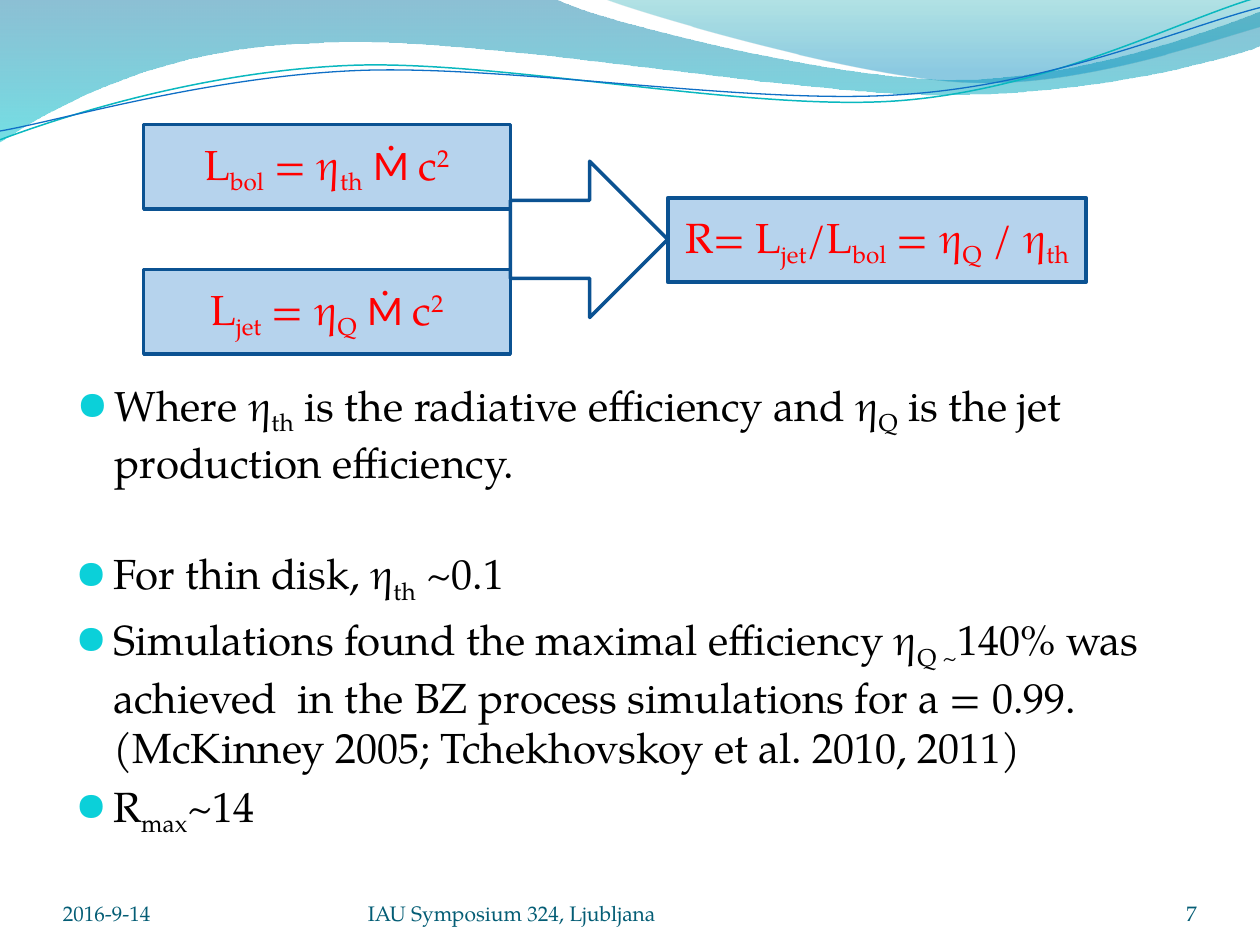
from math import cos, radians, sin

from lxml import etree
from pptx import Presentation
from pptx.dml.color import RGBColor
from pptx.enum import shapes, text
from pptx.oxml.ns import qn
from pptx.util import Inches, Pt

SERIF = "TeX Gyre Pagella"
BASELINES = {"_": -25000, "^": 30000}
OUTLINE = "0B5292"
LINE_TILT = -2.7

# Each wave is its place, then points of length 2 (line) or 6 (curve).
WAVES = [
    ((-0.01, -0.01, 10.02, 1.14),
     [(0, 0), (4.4, -0.01), (4.76, 0.17, 6.64, 0.63, 7.58, 0.63),
      (8.53, 0.63, 9.58, 0.26, 10, 0.09), (10.01, 0.36),
      (9.83, 0.44, 8.7, 0.76, 7.46, 0.75), (6.22, 0.75, 3.82, 0.28, 2.57, 0.34),
      (1.29, 0.36, 0.46, 0.83, -0.01, 1.13), (0, 0)],
     [(0, "0074A1", 45), (1, "00C6CF", 55)]),
    ((4.79, -0.01, 5.21, 0.7),
     [(4.79, -0.01), (5.09, 0.11, 6.82, 0.62, 7.69, 0.65),
      (8.56, 0.69, 9.61, 0.32, 10, 0.21), (10, 0), (4.79, -0.01)],
     [(0, "00A1A9", 30), (0.8, "008BBF", 45)]),
]
WAVE_LINES = [
    ((-0.02, 0.22, 10.02, 0.71),
     [(0, 1.11), (0.48, 0.93, 1.58, 0.57, 2.77, 0.52),
      (3.95, 0.47, 5.93, 0.89, 7.13, 0.8), (8.33, 0.71, 9.38, 0.15, 9.98, -0.02)],
     "0AB8BF", 0.85),
    ((-0.02, 0.3, 10.03, 0.58),
     [(0, 1.04), (0.47, 0.96, 1.64, 0.61, 2.83, 0.56),
      (4.03, 0.51, 5.97, 0.84, 7.17, 0.75), (8.36, 0.67, 9.41, 0.21, 10, 0.06)],
     "0F6FC6", 0.75),
]
# In marked text, "|" splits runs; a leading "_" lowers and "^" raises a run.
EQUATIONS = [
    ((1.14, 0.99, 2.91, 0.67), "L|_bol| = η|_th| |Ṁ |c|^2"),
    ((1.14, 2.14, 2.91, 0.67), "L|_jet| = η|_Q| |Ṁ |c|^2"),
    ((5.3, 1.57, 3.32, 0.67), "R= L|_jet|/L|_bol| = η|_Q| / η|_th"),
]
BULLET_LISTS = [
    ((0.5, 4.3, 9, 2.36), [
        "For thin disk, η|_th| ~0.1",
        "Simulations found the maximal efficiency η|_Q ~|140% was achieved  in the BZ "
        "process simulations for a = 0.99. (McKinney 2005; Tchekhovskoy et al. 2010, 2011)",
        "R|_max|~14"]),
    ((0.51, 2.96, 8.19, 1.02), [
        "Where η|_th| is the radiative efficiency and η|_Q| is the jet "
        "production efficiency."]),
]
FOOTERS = [
    ((0.5, 6.95, 2.33, 0.4), "2016-9-14", text.PP_ALIGN.LEFT),
    ((2.92, 6.95, 3.67, 0.4), "IAU Symposium 324, Ljubljana", text.PP_ALIGN.LEFT),
    ((8.67, 6.95, 0.83, 0.4), "7", text.PP_ALIGN.RIGHT),
]


def rgb(value):
    return RGBColor.from_string(value)


def box(place):
    return [Inches(length) for length in place]


def set_format(target, values):
    for name, value in values.items():
        setattr(target, name, value)


def set_alpha(fill_element, percents):
    """Give each colour in a fill its opacity, in order."""
    for color, percent in zip(fill_element.iter(qn("a:srgbClr")), percents):
        etree.SubElement(color, qn("a:alpha"), val=str(percent * 1000))


def set_line(shape, color, width):
    shape.line.color.rgb = rgb(color)
    shape.line.width = Pt(width)


def to_local(point, place, tilt):
    """Turn a point on the slide into one inside a tilted box."""
    left, top, width, height = place
    x, y = point[0] - left - width / 2, point[1] - top - height / 2
    angle = radians(-tilt)
    return (Inches(x * cos(angle) - y * sin(angle) + width / 2),
            Inches(x * sin(angle) + y * cos(angle) + height / 2))


def add_freeform(slide, place, segments, tilt=0):
    ends = [box(segment[-2:]) for segment in segments]
    builder = slide.shapes.build_freeform(*ends[0])
    builder.add_line_segments(ends[1:], close=ends[0] == ends[-1])
    shape = builder.convert_to_shape()
    shape.shadow.inherit = False
    left, top, width, height = box(place)
    set_format(shape, {"left": left, "top": top, "width": width, "height": height,
                       "rotation": tilt})
    outline = next(shape.element.iter(qn("a:path")))
    outline.set("w", str(width))
    outline.set("h", str(height))
    for step, segment in zip(list(outline), segments):
        step.clear()
        if len(segment) == 6:
            step.tag = qn("a:cubicBezTo")
        for index in range(0, len(segment), 2):
            x, y = to_local(segment[index:index + 2], place, tilt)
            etree.SubElement(step, qn("a:pt"), x=str(x), y=str(y))
    return shape


def add_wave(slide, place, segments, stops):
    shape = add_freeform(slide, place, segments)
    shape.line.fill.background()
    shape.fill.gradient()
    shape.fill.gradient_angle = 270
    for stop, (position, color, _) in zip(shape.fill.gradient_stops, stops):
        stop.position = position
        stop.color.rgb = rgb(color)
    set_alpha(shape.element.spPr, [alpha for _, _, alpha in stops])


def add_wave_line(slide, place, segments, color, width):
    shape = add_freeform(slide, place, segments, LINE_TILT)
    shape.fill.background()
    set_line(shape, color, width)


def write_runs(paragraph, marked, size, color):
    for part in marked.split("|"):
        baseline = BASELINES.get(part[0])
        run = paragraph.add_run()
        run.text = part[1:] if baseline else part
        set_format(run.font, {"size": Pt(size), "name": "Calibri" if "Ṁ" in part else SERIF})
        run.font.color.rgb = rgb(color)
        if baseline:
            run.font._element.set("baseline", str(baseline))


def add_equation(slide, place, marked):
    shape = slide.shapes.add_shape(shapes.MSO_SHAPE.FLOWCHART_PROCESS, *box(place))
    shape.shadow.inherit = False
    shape.fill.solid()
    shape.fill.fore_color.rgb = rgb("0F6FC6")
    set_alpha(shape.element.spPr, [30])
    set_line(shape, OUTLINE, 2)
    set_format(shape.text_frame, {"word_wrap": True,
                                  "vertical_anchor": text.MSO_ANCHOR.MIDDLE})
    paragraph = shape.text_frame.paragraphs[0]
    paragraph.alignment = text.PP_ALIGN.CENTER
    write_runs(paragraph, marked, 24, "FF0000")


def add_arrow(slide, place):
    shape = slide.shapes.add_shape(shapes.MSO_SHAPE.RIGHT_ARROW, *box(place))
    shape.shadow.inherit = False
    shape.fill.background()
    set_line(shape, OUTLINE, 2)


def set_bullet(paragraph):
    properties = paragraph._p.get_or_add_pPr()
    properties.set("marL", str(Inches(0.3)))
    properties.set("indent", str(Inches(-0.3)))
    color = etree.SubElement(properties, qn("a:buClr"))
    etree.SubElement(color, qn("a:srgbClr"), val="0BD0D9")
    etree.SubElement(properties, qn("a:buSzPct"), val="95000")
    etree.SubElement(properties, qn("a:buFont"), typeface="OpenSymbol")
    etree.SubElement(properties, qn("a:buChar"), char="●")


def add_bullets(slide, place, items):
    frame = slide.shapes.add_textbox(*box(place)).text_frame
    frame.word_wrap = True
    for index, item in enumerate(items):
        paragraph = frame.add_paragraph() if index else frame.paragraphs[0]
        paragraph.space_before = Pt(4.8)
        set_bullet(paragraph)
        write_runs(paragraph, item, 24, "000000")


def add_footer(slide, place, words, alignment):
    frame = slide.shapes.add_textbox(*box(place)).text_frame
    margins = {f"margin_{side}": 0 for side in ("left", "right", "top", "bottom")}
    set_format(frame, {"word_wrap": True, "vertical_anchor": text.MSO_ANCHOR.BOTTOM, **margins})
    frame.paragraphs[0].alignment = alignment
    write_runs(frame.paragraphs[0], words, 12, "045D75")


def main():
    presentation = Presentation()
    set_format(presentation, {"slide_width": Inches(10), "slide_height": Inches(7.5)})
    slide = presentation.slides.add_slide(presentation.slide_layouts[6])
    for add, items in ((add_wave, WAVES), (add_wave_line, WAVE_LINES),
                       (add_equation, EQUATIONS), (add_bullets, BULLET_LISTS),
                       (add_footer, FOOTERS)):
        for item in items:
            add(slide, *item)
    add_arrow(slide, (4.05, 1.28, 1.25, 1.24))
    presentation.save("out.pptx")


if __name__ == "__main__":
    main()
